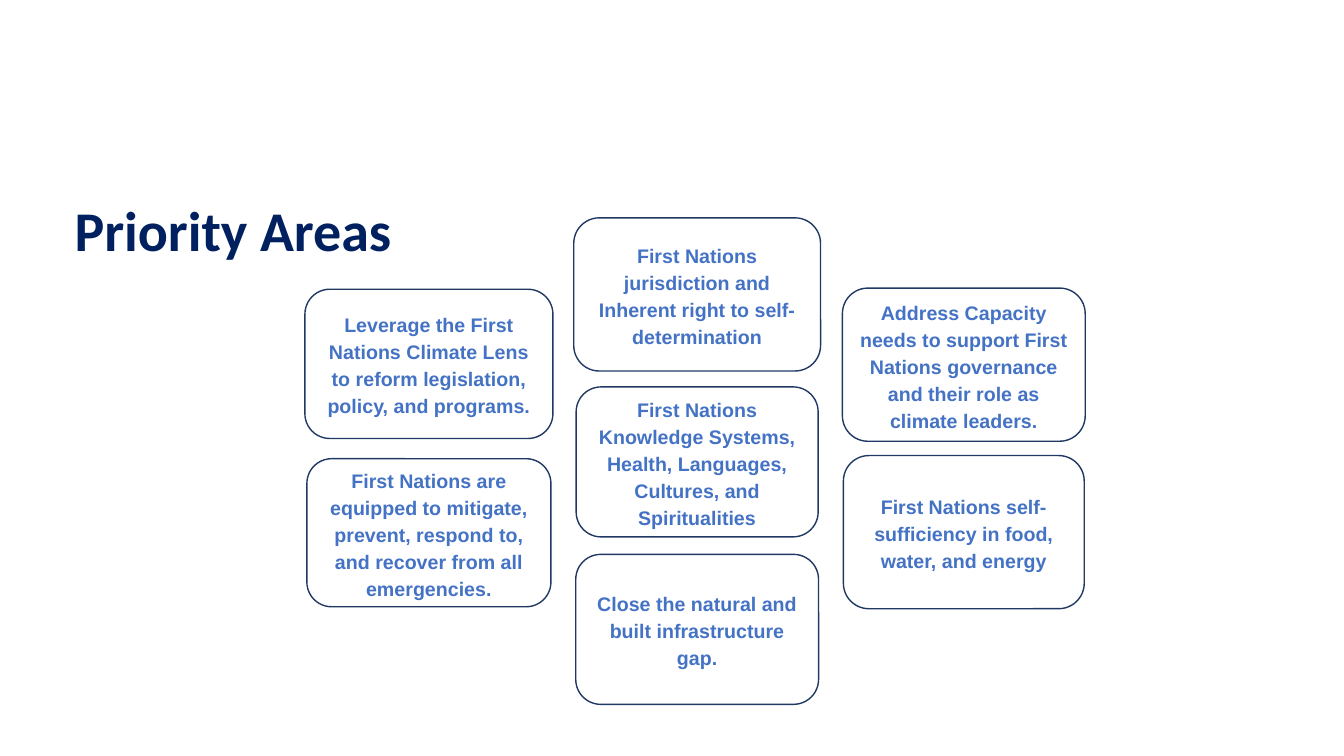
from dataclasses import dataclass

from pptx import Presentation
from pptx import util as u
from pptx.dml.color import RGBColor
from pptx.enum import shapes, text

NAVY = "002060"
OUTLINE = "203864"
BLUE = "4472C4"
WHITE = "FFFFFF"

# Horizontal centres of the three columns, in cm
LEFT, MIDDLE, RIGHT = 10.81, 17.57, 24.29


@dataclass
class Priority:
    """A card centred on its column; lengths in cm."""
    wording: str
    column: float
    top: float
    width: float
    height: float
    space_after: int = 10


PRIORITIES = [
    Priority("First Nations Knowledge Systems, Health, Languages, Cultures, and Spiritualities",
             MIDDLE, 9.75, 6.1, 3.78),
    Priority("First Nations jurisdiction and Inherent right to self-determination",
             MIDDLE, 5.49, 6.22, 3.86),
    Priority("Address Capacity needs to support First Nations governance "
             "and their role as climate leaders.",
             RIGHT, 7.26, 6.12, 3.86),
    Priority("First Nations self-sufficiency in food, water, and energy",
             RIGHT, 11.48, 6.07, 3.86),
    Priority("Close the natural and built infrastructure gap.",
             MIDDLE, 13.97, 6.12, 3.78, space_after=0),
    Priority("Leverage the First Nations Climate Lens to reform legislation, policy, and programs.",
             LEFT, 7.29, 6.25, 3.76),
    Priority("First Nations are equipped to mitigate, prevent, respond to, "
             "and recover from all emergencies.",
             LEFT, 11.56, 6.15, 3.73),
]


def color(hex_code: str) -> RGBColor:
    return RGBColor.from_string(hex_code)


def write(frame, wording: str, font_name: str, size: int, hex_code: str, line_spacing: float):
    """Fill the frame with one bold paragraph and return that paragraph."""
    frame.word_wrap = True
    frame.text = wording
    paragraph = frame.paragraphs[0]
    paragraph.line_spacing = line_spacing
    font = paragraph.runs[0].font
    font.name = font_name
    font.size = u.Pt(size)
    font.bold = True
    font.color.rgb = color(hex_code)
    return paragraph


def add_heading(slide) -> None:
    heading = slide.shapes.add_textbox(u.Cm(1.63), u.Cm(5), u.Cm(11.05), u.Cm(2.21))
    write(heading.text_frame, "Priority Areas", "Calibri", 40, NAVY, 0.9)


def add_priority(slide, priority: Priority) -> None:
    card = slide.shapes.add_shape(
        shapes.MSO_SHAPE.ROUNDED_RECTANGLE,
        u.Cm(priority.column - priority.width / 2), u.Cm(priority.top),
        u.Cm(priority.width), u.Cm(priority.height))
    card.shadow.inherit = False
    card.fill.solid()
    card.fill.fore_color.rgb = color(WHITE)
    card.line.color.rgb = color(OUTLINE)
    card.line.width = u.Pt(1)
    card.text_frame.vertical_anchor = text.MSO_ANCHOR.MIDDLE
    paragraph = write(card.text_frame, priority.wording, "Arial", 14, BLUE, 1.15)
    paragraph.alignment = text.PP_ALIGN.CENTER
    paragraph.space_after = u.Pt(priority.space_after)


def main() -> None:
    deck = Presentation()
    deck.slide_width, deck.slide_height = u.Cm(33.87), u.Cm(19.05)
    slide = deck.slides.add_slide(deck.slide_layouts[6])
    add_heading(slide)
    for priority in PRIORITIES:
        add_priority(slide, priority)
    deck.save("out.pptx")


if __name__ == "__main__":
    main()
